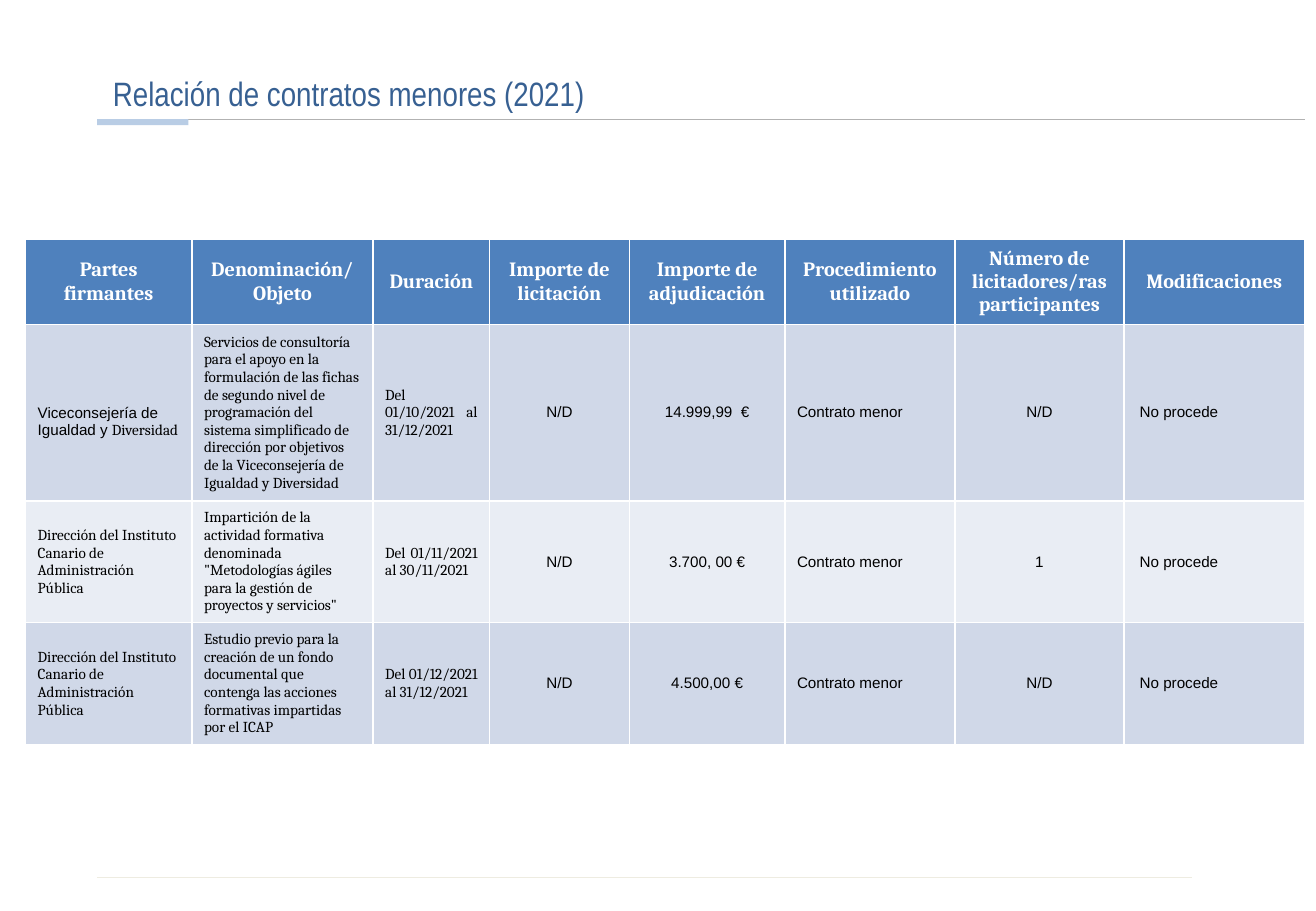
from lxml import etree
from pptx import Presentation
from pptx.dml.color import RGBColor
from pptx.enum.shapes import MSO_CONNECTOR, MSO_SHAPE
from pptx.enum.text import MSO_ANCHOR, PP_ALIGN
from pptx.oxml.ns import qn
from pptx.util import Inches, Pt

TITLE_BLUE = RGBColor(0x37, 0x60, 0x92)
ACCENT_BLUE = RGBColor(0xB9, 0xCD, 0xE5)
HEADER_BLUE = RGBColor(0x4F, 0x81, 0xBD)
BAND_DARK = RGBColor(0xD0, 0xD8, 0xE8)
BAND_LIGHT = RGBColor(0xE9, 0xED, 0xF4)
RULE_GRAY = RGBColor(0xB2, 0xB2, 0xB2)
FOOTER_CREAM = RGBColor(0xEE, 0xEC, 0xE1)
WHITE = RGBColor(0xFF, 0xFF, 0xFF)
BLACK = RGBColor(0, 0, 0)

# Heading, width, body font, body alignment, left and right margins
COLUMNS = [
    ("Partes firmantes", 1.37, "Cambria", PP_ALIGN.LEFT, 0.1, 0.1),
    ("Denominación/Objeto", 1.49, "Cambria", PP_ALIGN.LEFT, 0.1, 0.1),
    ("Duración", 0.96, "Cambria", PP_ALIGN.JUSTIFY, 0.1, 0.1),
    ("Importe de licitación", 1.15, "Arial", PP_ALIGN.CENTER, 0.1, 0.1),
    ("Importe de adjudicación", 1.28, "Arial", PP_ALIGN.CENTER, 0, 0),
    ("Procedimiento utilizado", 1.4, "Arial", PP_ALIGN.LEFT, 0.1, 0),
    ("Número de licitadores/ras participantes", 1.39, "Arial", PP_ALIGN.CENTER, 0, 0),
    ("Modificaciones", 1.49, "Arial", PP_ALIGN.LEFT, 0.13, 0),
]
INSTITUTE = "Dirección del Instituto Canario de Administración Pública"
# A list holds the runs of a cell as (text, font)
CONTRACTS = [
    ([("Viceconsejería de Igualdad y ", "Arial"), ("Diversidad", "Cambria")],
     "Servicios de consultoría para el apoyo en la formulación de las fichas de "
     "segundo nivel de programación del sistema simplificado de dirección por "
     "objetivos de la Viceconsejería de Igualdad y Diversidad",
     "Del 01/10/2021 al 31/12/2021", "N/D", "14.999,99  €",
     "Contrato menor", "N/D", "No procede"),
    (INSTITUTE,
     "Impartición de la actividad formativa denominada \"Metodologías ágiles "
     "para la gestión de proyectos y servicios\"",
     "Del 01/11/2021 al 30/11/2021", "N/D", "3.700, 00 €",
     "Contrato menor", "1", "No procede"),
    (INSTITUTE,
     "Estudio previo para la creación de un fondo documental que contenga las "
     "acciones formativas impartidas por el ICAP",
     "Del 01/12/2021 al 31/12/2021", "N/D", "4.500,00 €",
     "Contrato menor", "N/D", "No procede"),
]
ROW_HEIGHTS = [0.67, 1.4, 0.97, 0.97]


def add_rule(slide, left, right, top, color, width):
    rule = slide.shapes.add_connector(
        MSO_CONNECTOR.STRAIGHT, Inches(left), Inches(top), Inches(right), Inches(top))
    rule.line.color.rgb = color
    rule.line.width = Pt(width)
    etree.SubElement(rule._element.spPr, qn("a:effectLst"))


def style_font(font, name, size, color, bold=False):
    font.name = name
    font.size = Pt(size)
    font.color.rgb = color
    font.bold = bold


def add_title(slide, text):
    box = slide.shapes.add_textbox(Inches(0.93), Inches(0.64), Inches(9.27), Inches(0.3))
    frame = box.text_frame
    frame.word_wrap = True
    frame.vertical_anchor = MSO_ANCHOR.BOTTOM
    frame.margin_left = frame.margin_right = frame.margin_top = frame.margin_bottom = 0
    paragraph = frame.paragraphs[0]
    paragraph.text = text
    paragraph.line_spacing = 0.9
    style_font(paragraph.font, "Arial Narrow", 20, TITLE_BLUE)


def add_accent(slide):
    shape = slide.shapes.add_shape(
        MSO_SHAPE.RECTANGLE, Inches(0.8), Inches(0.98), Inches(0.75), Inches(0.05))
    shape.shadow.inherit = False
    shape.fill.solid()
    shape.fill.fore_color.rgb = ACCENT_BLUE
    shape.line.fill.background()


def fill_cell(cell, content, fill, alignment, font_name, size, color, bold=False):
    cell.fill.solid()
    cell.fill.fore_color.rgb = fill
    cell.vertical_anchor = MSO_ANCHOR.MIDDLE
    paragraph = cell.text_frame.paragraphs[0]
    paragraph.alignment = alignment
    style_font(paragraph.font, font_name, size, color, bold)
    runs = content if isinstance(content, list) else [(content, font_name)]
    for text, run_font in runs:
        run = paragraph.add_run()
        run.text = text
        style_font(run.font, run_font, size, color, bold)


def add_contract_table(slide):
    table = slide.shapes.add_table(
        len(ROW_HEIGHTS), len(COLUMNS), Inches(0.21), Inches(1.97),
        Inches(sum(column[1] for column in COLUMNS)), Inches(sum(ROW_HEIGHTS))).table
    for row, height in zip(table.rows, ROW_HEIGHTS):
        row.height = Inches(height)
    for index, (heading, width, font_name, alignment, left, right) in enumerate(COLUMNS):
        table.columns[index].width = Inches(width)
        fill_cell(table.cell(0, index), heading, HEADER_BLUE,
                  PP_ALIGN.CENTER, "Cambria", 12, WHITE, True)
        for number, contract in enumerate(CONTRACTS, start=1):
            cell = table.cell(number, index)
            cell.margin_left, cell.margin_right = Inches(left), Inches(right)
            fill = BAND_DARK if number % 2 else BAND_LIGHT
            fill_cell(cell, contract[index], fill, alignment, font_name, 9, BLACK)
    # The first contracting party sits slightly below the middle
    table.cell(1, 0).margin_top = Inches(0.2)


def main():
    presentation = Presentation()
    presentation.slide_width = Inches(10.83)
    presentation.slide_height = Inches(7.5)
    slide = presentation.slides.add_slide(presentation.slide_layouts[6])

    # Footer and title rules
    add_rule(slide, 0.8, 9.81, 7.22, FOOTER_CREAM, 0.25)
    add_rule(slide, 1.55, 10.74, 0.98, RULE_GRAY, 0.5)
    add_accent(slide)

    # Title and contracts
    add_title(slide, "Relación de contratos menores (2021)")
    add_contract_table(slide)
    presentation.save("out.pptx")


if __name__ == "__main__":
    main()
